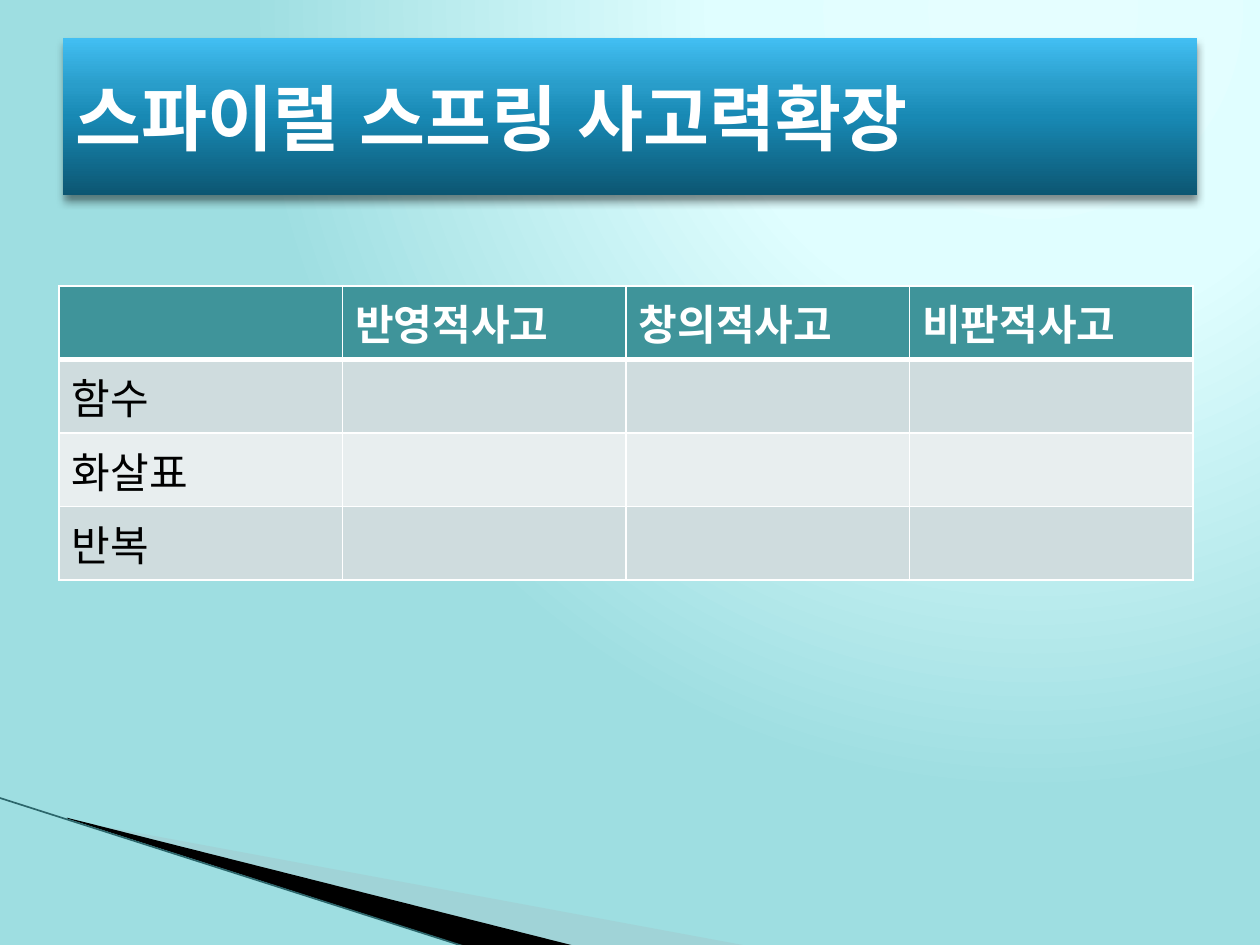
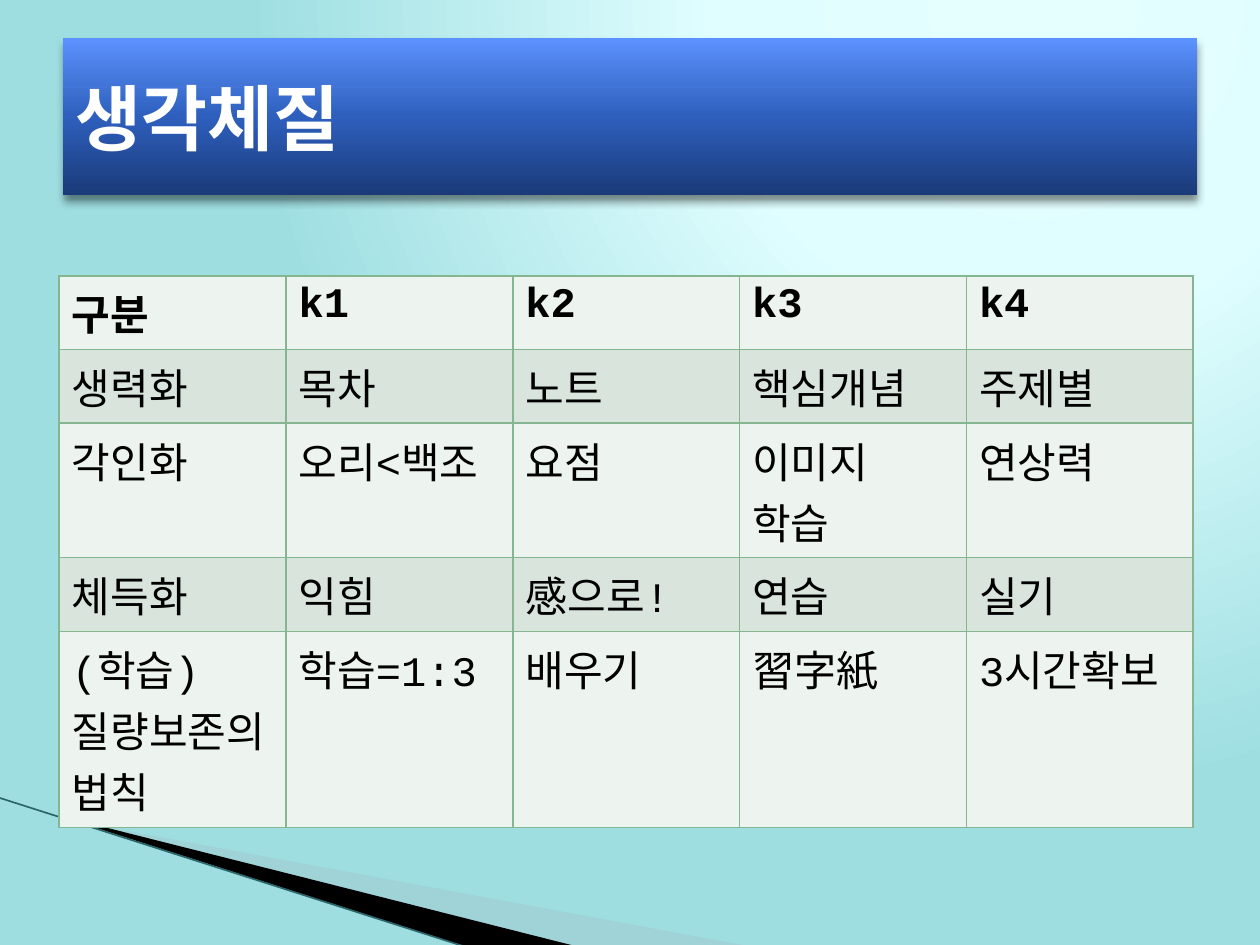
from dataclasses import dataclass
from typing import Optional

from lxml.etree import SubElement
from pptx import Presentation
from pptx.dml.color import RGBColor
from pptx.enum.lang import MSO_LANGUAGE_ID as Language
from pptx.enum.shapes import MSO_CONNECTOR as Connector, MSO_SHAPE as Shape
from pptx.enum.text import MSO_ANCHOR as Anchor
from pptx.oxml.ns import qn
from pptx.util import Pt

FONT = "Courier New"
WHITE = RGBColor(0xFF, 0xFF, 0xFF)
BLACK = RGBColor(0x00, 0x00, 0x00)
TEAL = RGBColor(0x3F, 0x94, 0x9A)
TEAL_BAND = RGBColor(0xCF, 0xDC, 0xDE)
TEAL_PALE = RGBColor(0xE8, 0xEE, 0xEF)
GREEN = RGBColor(0x85, 0xB6, 0x92)
GREEN_BAND = RGBColor(0xD9, 0xE5, 0xDC)
GREEN_PALE = RGBColor(0xED, 0xF3, 0xEE)
SWOOSH = RGBColor(0xA4, 0xC4, 0xC8)
SWOOSH_LINE = RGBColor(0x2C, 0x66, 0x6B)

SKY = [(0, RGBColor(0xE5, 0xFE, 0xFF)), (40, RGBColor(0xE0, 0xFE, 0xFF)),
       (100, RGBColor(0x9E, 0xDE, 0xE1))]
CYAN_BAND = [(0, RGBColor(0x0C, 0x56, 0x72)), (50, RGBColor(0x18, 0x89, 0xB4)),
             (70, RGBColor(0x29, 0x9D, 0xCA)), (100, RGBColor(0x42, 0xBF, 0xF3))]
BLUE_BAND = [(0, RGBColor(0x1A, 0x3A, 0x78)), (50, RGBColor(0x2E, 0x5F, 0xBD)),
             (70, RGBColor(0x41, 0x74, 0xD6)), (100, RGBColor(0x5C, 0x92, 0xFF))]

PAGE_WIDTH, PAGE_HEIGHT = 720, 540
TABLE_LEFT, TABLE_WIDTH, ROW_HEIGHT = 33.84, 648, 29.2


@dataclass
class Wedge:
    points: list
    color: RGBColor
    opacity: int = 100


@dataclass
class GridStyle:
    header: RGBColor
    header_text: RGBColor
    bands: tuple
    border: RGBColor
    header_rule: float = 1


@dataclass
class Page:
    title: str
    title_band: list
    table_top: float
    style: GridStyle
    rows: list


WEDGES = [
    Wedge([(39.6, 468.7), (428.4, 540.7), (328.3, 540.7), (39.6, 468)], SWOOSH, 40),
    Wedge([(38.2, 467.3), (329, 540.7), (267.8, 541.4), (38.9, 468)], BLACK),
]

PAGES = [
    Page("스파이럴 스프링 사고력확장", CYAN_BAND, 163.4,
         GridStyle(TEAL, WHITE, (TEAL_BAND, TEAL_PALE), WHITE, 3),
         [["", "반영적사고", "창의적사고", "비판적사고"],
          ["함수", "", "", ""],
          ["화살표", "", "", ""],
          ["반복", "", "", ""]]),
    Page("생각체질", BLUE_BAND, 157.7,
         GridStyle(GREEN_PALE, BLACK, (GREEN_BAND, GREEN_PALE), GREEN),
         [["구분", "k1", "k2", "k3", "k4"],
          ["생력화", "목차", "노트", "핵심개념", "주제별"],
          ["각인화", "오리<백조", "요점", "이미지\n학습", "연상력"],
          ["체득화", "익힘", "感으로!", "연습", "실기"],
          ["(학습)질량보존의 법칙", "학습=1:3", "배우기", "習字紙", "3시간확보"]]),
]


def add_node(parent, tag: str, **values):
    return SubElement(parent, qn(tag), {key: str(value) for key, value in values.items()})


def add_color(parent, color: RGBColor, opacity: int = 100) -> None:
    node = add_node(parent, "a:srgbClr", val=color)
    if opacity < 100:
        add_node(node, "a:alpha", val=opacity * 1000)


def set_gradient(owner, stops: list, angle: Optional[int] = None) -> None:
    """Fill a shape or master; without an angle the gradient is circular."""
    fill = owner.fill if hasattr(owner, "fill") else owner.background.fill
    fill.gradient()
    gradient = owner._element.find(".//" + qn("a:gradFill"))
    for child in list(gradient):
        gradient.remove(child)
    stop_list = add_node(gradient, "a:gsLst")
    for position, color in stops:
        add_color(add_node(stop_list, "a:gs", pos=position * 1000), color)
    if angle is None:
        circle = add_node(gradient, "a:path", path="circle")
        add_node(circle, "a:fillToRect", l=65000, t=0, r=0, b=98000)
    else:
        add_node(gradient, "a:lin", ang=angle * 60000, scaled=0)


def style_text(frame, size: float, color: RGBColor, bold: bool) -> None:
    values = {"name": FONT, "size": Pt(size), "bold": bold, "language_id": Language.KOREAN}
    for para in frame.paragraphs:
        for span in para.runs:
            for key, value in values.items():
                setattr(span.font, key, value)
            span.font.color.rgb = color


def add_wedge(page, wedge: Wedge) -> None:
    points = [(Pt(x), Pt(y)) for x, y in wedge.points]
    builder = page.shapes.build_freeform(*points[0])
    builder.add_line_segments(points[1:], close=True)
    shape = builder.convert_to_shape()
    shape.shadow.inherit = False
    shape.line.fill.background()
    shape.fill.solid()
    shape.fill.fore_color.rgb = wedge.color
    if wedge.opacity < 100:
        color_node = shape._element.spPr.find(qn("a:solidFill"))[0]
        add_node(color_node, "a:alpha", val=wedge.opacity * 1000)


def add_corner(page) -> None:
    for wedge in WEDGES:
        add_wedge(page, wedge)
    edge = page.shapes.add_connector(
        Connector.STRAIGHT, Pt(-0.7), Pt(455.8), Pt(267.1), Pt(541.4))
    edge.line.color.rgb = SWOOSH_LINE
    edge.line.width = Pt(0.95)
    add_node(edge._element.spPr, "a:effectLst")


def add_title(page, title: str, stops: list) -> None:
    box = page.shapes.add_shape(Shape.RECTANGLE, Pt(36), Pt(21.6), Pt(648), Pt(90))
    box.line.fill.background()
    set_gradient(box, stops, 270)
    box.shadow.inherit = False
    effects = box._element.spPr.find(qn("a:effectLst"))
    shadow = add_node(effects, "a:outerShdw", blurRad=Pt(5), dist=Pt(3),
                      dir=90 * 60000, rotWithShape=0)
    add_color(shadow, BLACK, 45)
    frame = box.text_frame
    frame.word_wrap = True
    frame.vertical_anchor = Anchor.MIDDLE
    frame.text = title
    frame.paragraphs[0].alignment = 1
    style_text(frame, 41, WHITE, True)


def set_borders(cell, color: RGBColor, top: float, bottom: float) -> None:
    properties = cell._tc.get_or_add_tcPr()
    for side, width in {"L": 1, "R": 1, "T": top, "B": bottom}.items():
        line = add_node(properties, f"a:ln{side}", w=Pt(width))
        add_color(add_node(line, "a:solidFill"), color)


def add_grid(page, top: float, rows: list, style: GridStyle) -> None:
    column_count = len(rows[0])
    table = page.shapes.add_table(
        len(rows), column_count, Pt(TABLE_LEFT), Pt(top),
        Pt(TABLE_WIDTH), Pt(ROW_HEIGHT * len(rows))).table
    table.first_row = table.horz_banding = False
    for row_index, texts in enumerate(rows):
        is_header = row_index == 0
        fill = style.header if is_header else style.bands[(row_index - 1) % 2]
        for column_index, text in enumerate(texts):
            cell = table.cell(row_index, column_index)
            set_borders(cell, style.border,
                        style.header_rule if row_index == 1 else 1,
                        style.header_rule if is_header else 1)
            cell.fill.solid()
            cell.fill.fore_color.rgb = fill
            if text:
                cell.text_frame.text = text
                style_text(cell.text_frame, 24,
                           style.header_text if is_header else BLACK, is_header)


def main() -> None:
    deck = Presentation()
    deck.slide_width, deck.slide_height = Pt(PAGE_WIDTH), Pt(PAGE_HEIGHT)
    set_gradient(deck.slide_master, SKY)
    for content in PAGES:
        page = deck.slides.add_slide(deck.slide_layouts[6])
        add_corner(page)
        add_grid(page, content.table_top, content.rows, content.style)
        add_title(page, content.title, content.title_band)
    deck.save("out.pptx")


if __name__ == "__main__":
    main()
